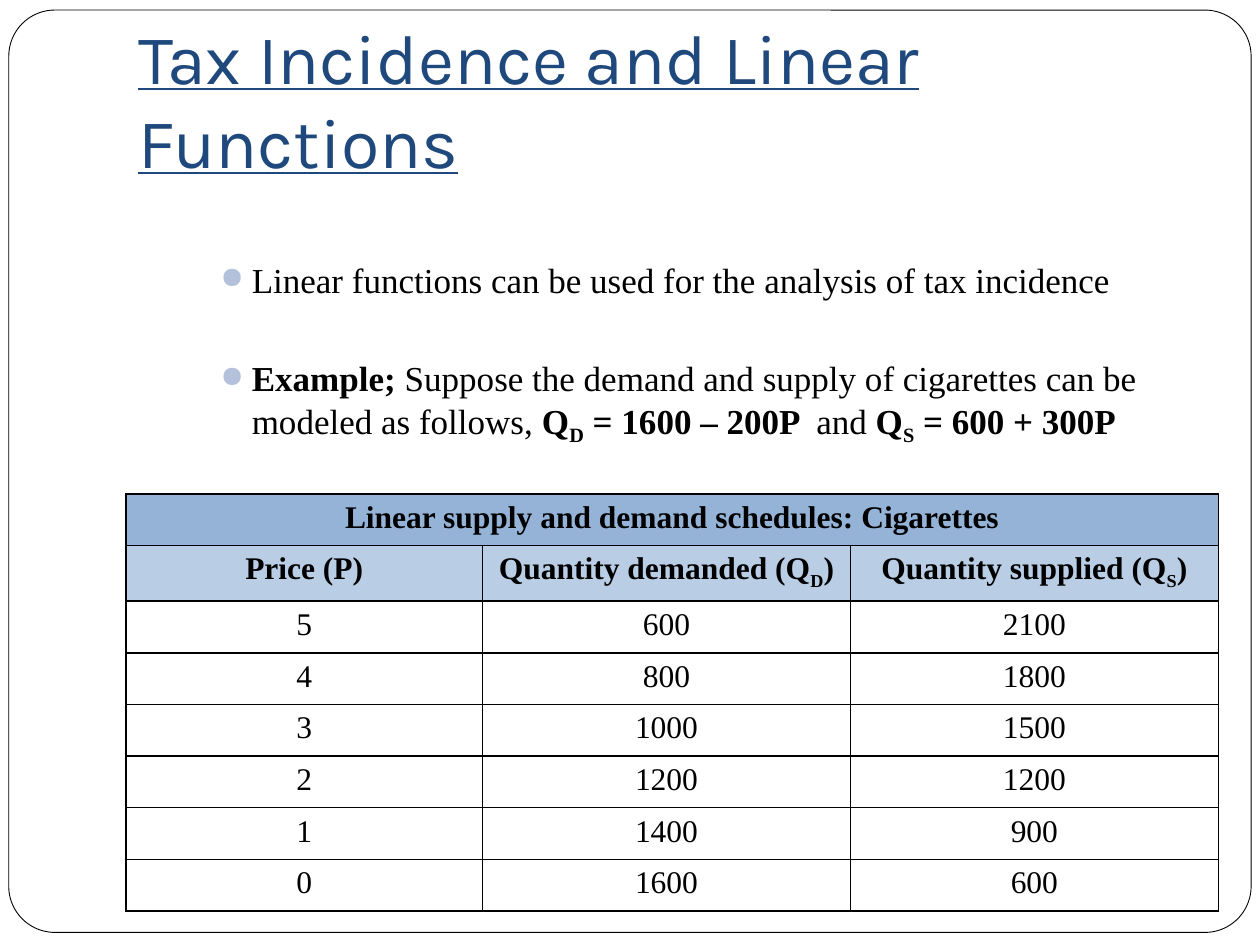
from dataclasses import dataclass

from lxml import etree
from pptx import Presentation
from pptx.dml.color import RGBColor
from pptx.enum.shapes import MSO_SHAPE
from pptx.enum.text import MSO_ANCHOR, PP_ALIGN
from pptx.oxml.ns import qn
from pptx.util import Inches, Pt

ROUND = MSO_SHAPE.ROUNDED_RECTANGLE
BOTTOM = MSO_ANCHOR.BOTTOM
CENTER = PP_ALIGN.CENTER
HEX = {"ink": "000000", "paper": "FFFFFF", "title": "1F497D",
       "dot": "B3C1DB", "head": "95B3D7", "label": "B9CDE5"}
SERIF = "Times New Roman"
WIDTHS = (2.83, 2.92, 2.92)
ROW = 0.41


@dataclass
class Piece:
    text: str
    bold: bool = False
    sub: bool = False


@dataclass
class Point:
    words: list[Piece]
    gap: float


POINTS = [
    Point([Piece("Linear functions can be used for the analysis of tax incidence")], 0),
    Point([Piece("Example; ", True),
           Piece("Suppose the demand and supply of cigarettes can be modeled as follows, "),
           Piece("Q", True), Piece("D", True, True), Piece(" = 1600 – 200P  ", True),
           Piece("and "),
           Piece("Q", True), Piece("S", True, True), Piece(" = 600 + 300P", True)], 32.4),
]
LABELS = [
    [Piece("Price (P)", True)],
    [Piece("Quantity demanded (Q", True), Piece("D", True, True), Piece(")", True)],
    [Piece("Quantity supplied (Q", True), Piece("S", True, True), Piece(")", True)],
]


def color(name: str) -> RGBColor:
    """Return the named colour."""
    return RGBColor.from_string(HEX[name])


def style(para, name: str, size: float, tint: str) -> None:
    """Set the font of a whole paragraph."""
    font = para.font
    font.name, font.size = name, Pt(size)
    font.color.rgb = color(tint)


def write(para, words: list[Piece], size: float) -> None:
    """Fill a paragraph with plain, bold and subscript pieces."""
    style(para, SERIF, size, "ink")
    same = len({piece.bold for piece in words}) == 1
    if same:
        para.font.bold = words[0].bold
    for piece in words:
        run = para.add_run()
        run.text = piece.text
        if not same:
            run.font.bold = piece.bold
        if piece.sub:
            run.font._element.set("baseline", "-25000")


def bullet(para) -> None:
    """Give a paragraph a hanging round bullet."""
    props = para._p.get_or_add_pPr()
    props.set("marL", str(Inches(0.9)))
    props.set("indent", str(Inches(-0.25)))
    tint = etree.SubElement(props, qn("a:buClr"))
    etree.SubElement(tint, qn("a:srgbClr"), val=HEX["dot"])
    etree.SubElement(props, qn("a:buSzPct"), val="85000")
    etree.SubElement(props, qn("a:buChar"), char="●")


def border(cell) -> None:
    """Draw a thin line on each side of a cell."""
    props = cell._tc.get_or_add_tcPr()
    for side in ("a:lnL", "a:lnR", "a:lnT", "a:lnB"):
        line = etree.SubElement(props, qn(side), w=str(Pt(1)))
        fill = etree.SubElement(line, qn("a:solidFill"))
        etree.SubElement(fill, qn("a:srgbClr"), val=HEX["ink"])


def paint(cell, tint: str | None) -> None:
    """Fill a cell, or leave it clear, and line its sides."""
    border(cell)
    if tint:
        cell.fill.solid()
        cell.fill.fore_color.rgb = color(tint)
    else:
        cell.fill.background()


def add_frame(slide) -> None:
    """Draw the rounded frame of the slide."""
    frame = slide.shapes.add_shape(ROUND, Inches(0.07), Inches(0.08),
                                   Inches(9.86), Inches(7.32))
    frame.adjustments[0] = 0.05
    frame.shadow.inherit = False
    frame.fill.solid()
    frame.fill.fore_color.rgb = color("paper")
    frame.line.color.rgb = color("ink")
    frame.line.width = Pt(0.5)


def add_title(slide) -> None:
    """Write the title."""
    box = slide.shapes.add_textbox(Inches(1), Inches(0.3), Inches(8.5), Inches(1.25))
    text = box.text_frame
    text.word_wrap = True
    text.vertical_anchor = BOTTOM
    text.margin_bottom = Inches(0.1)
    para = text.paragraphs[0]
    para.text = "Tax Incidence and Linear Functions"
    style(para, "Karla", 40, "title")
    para.font.underline = True


def add_points(slide) -> None:
    """Write the bulleted points."""
    box = slide.shapes.add_textbox(Inches(1), Inches(1.58), Inches(8.5), Inches(5))
    text = box.text_frame
    text.word_wrap = True
    text.margin_top = Inches(0.47)
    for i, point in enumerate(POINTS):
        para = text.add_paragraph() if i else text.paragraphs[0]
        para.level = 2
        para.space_before = Pt(point.gap)
        bullet(para)
        write(para, point.words, 20)


def add_grid(slide) -> None:
    """Build the table of supply and demand."""
    head = [[Piece("Linear supply and demand schedules: Cigarettes", True)], [], []]
    rows = [head, LABELS]
    for price in range(5, -1, -1):
        values = (price, 1600 - 200 * price, 600 + 300 * price)
        rows.append([[Piece(str(value))] for value in values])
    table = slide.shapes.add_table(len(rows), len(WIDTHS), Inches(1), Inches(3.92),
                                   Inches(sum(WIDTHS)), Inches(ROW * len(rows))).table
    table.first_row = table.horz_banding = False
    for column, width in zip(table.columns, WIDTHS):
        column.width = Inches(width)
    tints = {0: "head", 1: "label"}
    for r, row in enumerate(rows):
        table.rows[r].height = Inches(ROW)
        for c, words in enumerate(row):
            cell = table.cell(r, c)
            paint(cell, tints.get(r))
            if words:
                para = cell.text_frame.paragraphs[0]
                para.alignment = CENTER
                write(para, words, 18)
    table.cell(0, 0).merge(table.cell(0, 2))


def main() -> None:
    """Build and save the slide."""
    deck = Presentation()
    deck.slide_width, deck.slide_height = Inches(10), Inches(7.5)
    slide = deck.slides.add_slide(deck.slide_layouts[6])
    add_frame(slide)
    add_title(slide)
    add_points(slide)
    add_grid(slide)
    deck.save("out.pptx")


if __name__ == "__main__":
    main()
